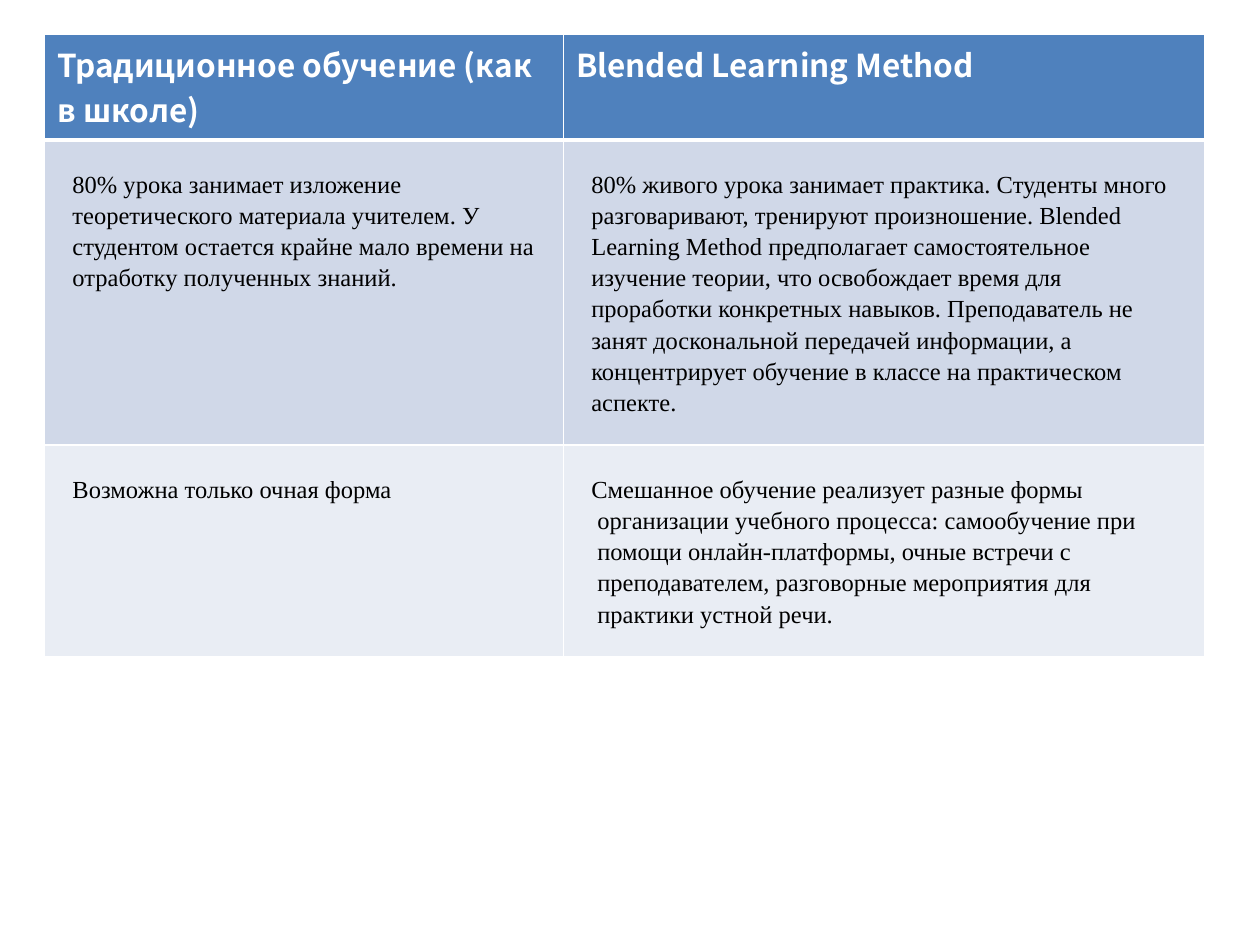
from lxml.etree import SubElement
from pptx import Presentation
from pptx.dml.color import RGBColor
from pptx.oxml.ns import qn
from pptx.util import Cm, Pt

WHITE = RGBColor(0xFF, 0xFF, 0xFF)
BLACK = RGBColor(0x00, 0x00, 0x00)
ROW_FILLS = [
    RGBColor(0x4F, 0x81, 0xBD),
    RGBColor(0xD0, 0xD8, 0xE8),
    RGBColor(0xE9, 0xED, 0xF4),
]
COLUMN_WIDTHS = [Cm(10.46), Cm(12.93)]
ROW_HEIGHTS = [Cm(2.13), Cm(6.15), Cm(4.27)]

# Each cell is a list of paragraphs.
ROWS = [
    [
        ["Традиционное обучение (как в школе)"],
        ["Blended Learning Method"],
    ],
    [
        ["80% урока занимает изложение теоретического материала учителем. "
         "У студентом остается крайне мало времени на отработку полученных знаний."],
        ["80% живого урока занимает практика. Студенты много разговаривают, "
         "тренируют произношение. Blended Learning Method предполагает "
         "самостоятельное изучение теории, что освобождает время для проработки "
         "конкретных навыков. Преподаватель не занят доскональной передачей "
         "информации, а концентрирует обучение в классе на практическом аспекте."],
    ],
    [
        ["Возможна только очная форма"],
        ["Смешанное обучение реализует разные формы",
         "организации учебного процесса: самообучение при",
         "помощи онлайн-платформы, очные встречи с",
         "преподавателем, разговорные мероприятия для",
         "практики устной речи."],
    ],
]


def add_border(cell, side, width):
    """Draw a white line on one side (L, R, T or B) of a cell."""
    line = SubElement(cell._tc.get_or_add_tcPr(), qn(f"a:ln{side}"), w=str(width))
    fill = SubElement(line, qn("a:solidFill"))
    SubElement(fill, qn("a:srgbClr"), val=str(WHITE))


presentation = Presentation()
presentation.slide_width = Cm(25.4)
presentation.slide_height = Cm(19.05)
slide = presentation.slides.add_slide(presentation.slide_layouts[6])

table = slide.shapes.add_table(
    len(ROWS), len(COLUMN_WIDTHS), Cm(0.9), Cm(0.69), sum(COLUMN_WIDTHS), sum(ROW_HEIGHTS)
).table
table.first_row = False
table.horz_banding = False
for column, width in zip(table.columns, COLUMN_WIDTHS):
    column.width = width

for row_index, (row, height) in enumerate(zip(table.rows, ROW_HEIGHTS)):
    row.height = height
    is_header = row_index == 0
    for cell, texts in zip(row.cells, ROWS[row_index]):
        add_border(cell, "L", Pt(1))
        add_border(cell, "R", Pt(1))
        add_border(cell, "T", Pt(3) if row_index == 1 else Pt(1))
        add_border(cell, "B", Pt(3) if is_header else Pt(1))
        cell.fill.solid()
        cell.fill.fore_color.rgb = ROW_FILLS[row_index]
        if not is_header:
            cell.margin_left = cell.margin_right = Cm(0.56)
            cell.margin_top = cell.margin_bottom = Cm(0.56)

        for text_index, text in enumerate(texts):
            if text_index == 0:
                paragraph = cell.text_frame.paragraphs[0]
            else:
                paragraph = cell.text_frame.add_paragraph()
                paragraph._p.get_or_add_pPr().set("marL", str(Cm(0.12)))
            if not is_header:
                paragraph.line_spacing = 1.15
            run = paragraph.add_run()
            run.text = text
            run.font.name = "Noto Sans CJK KR" if is_header else "Times New Roman"
            run.font.size = Pt(18) if is_header else Pt(14)
            run.font.bold = is_header
            run.font.color.rgb = WHITE if is_header else BLACK

presentation.save("out.pptx")
